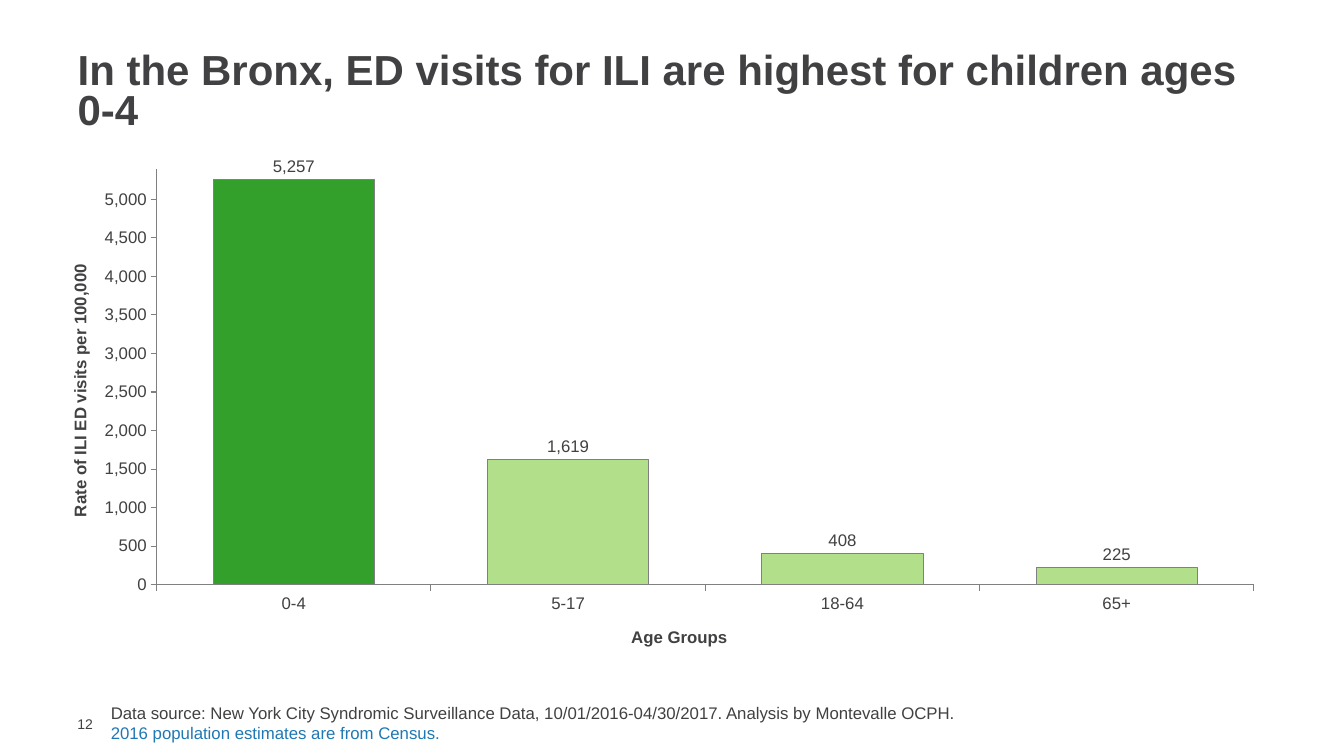
from lxml import etree
from pptx import Presentation
from pptx.chart.data import CategoryChartData
from pptx.dml.color import RGBColor
from pptx.enum.chart import XL_CHART_TYPE as ChartType, XL_LABEL_POSITION as LabelPosition
from pptx.enum.chart import XL_TICK_MARK as TickMark
from pptx.enum.text import MSO_ANCHOR as Anchor, PP_ALIGN as Align
from pptx.oxml.ns import qn
from pptx.util import Inches, Pt

COLORS = {
    "text": "414042",
    "note": "1F78B4",
    "axis": "808080",
    "bar": "B2DF8A",
    "highlight": "33A02C",
}
RATES = {"0-4": 5257, "5-17": 1619, "18-64": 408, "65+": 225}
PLOT_LAYOUT = {
    "layoutTarget": "inner",
    "xMode": "edge",
    "yMode": "edge",
    "x": 0.075,
    "y": 0.027,
    "w": 0.913,
    "h": 0.732,
}


def color(name):
    return RGBColor.from_string(COLORS[name])


def apply(target, values):
    for key, value in values.items():
        setattr(target, key, value)


def style_font(font, size, color_name="text", bold=False):
    apply(font, {"name": "Arial", "size": Pt(size), "bold": bold})
    font.color.rgb = color(color_name)


def style_line(line):
    line.color.rgb = color("axis")
    line.width = Pt(0.75)


def place(box):
    return dict(zip(("left", "top", "width", "height"), map(Inches, box)))


def add_title(slide, box, wording):
    title = slide.shapes.title
    apply(title, place(box))
    apply(title.text_frame, {
        "text": wording,
        "word_wrap": True,
        "vertical_anchor": Anchor.MIDDLE,
    })
    heading = title.text_frame.paragraphs[0]
    apply(heading, {"alignment": Align.LEFT, "line_spacing": 0.8})
    style_font(heading.runs[0].font, 30, bold=True)


def add_text(slide, box, lines, size, frame_format):
    frame = slide.shapes.add_textbox(**place(box)).text_frame
    apply(frame, {"word_wrap": True, **frame_format})
    for index, (wording, color_name) in enumerate(lines):
        paragraph = frame.add_paragraph() if index else frame.paragraphs[0]
        run = paragraph.add_run()
        run.text = wording
        style_font(run.font, size, color_name)


def format_axis(axis, caption):
    apply(axis, {
        "has_major_gridlines": False,
        "major_tick_mark": TickMark.OUTSIDE,
        "minor_tick_mark": TickMark.NONE,
    })
    style_line(axis.format.line)
    style_font(axis.tick_labels.font, 12)
    heading = axis.axis_title.text_frame
    heading.text = caption
    style_font(heading.paragraphs[0].runs[0].font, 12, bold=True)


def set_plot_layout(chart):
    plot_area = chart.element.chart.plotArea
    for old_layout in plot_area.findall(qn("c:layout")):
        plot_area.remove(old_layout)
    layout = etree.Element(qn("c:layout"))
    manual = etree.SubElement(layout, qn("c:manualLayout"))
    for key, value in PLOT_LAYOUT.items():
        etree.SubElement(manual, qn(f"c:{key}")).set("val", str(value))
    plot_area.insert(0, layout)


def add_rate_chart(slide, box):
    rates = CategoryChartData(number_format="#,##0")
    rates.categories = list(RATES)
    rates.add_series("Series 1", list(RATES.values()))
    chart = slide.shapes.add_chart(
        ChartType.COLUMN_CLUSTERED, *place(box).values(), rates
    ).chart
    apply(chart, {"has_legend": False, "has_title": False})
    style_font(chart.font, 12)
    set_plot_layout(chart)

    format_axis(chart.category_axis, "Age Groups")
    format_axis(chart.value_axis, "Rate of ILI ED visits per 100,000")
    apply(chart.value_axis, {"minimum_scale": 0, "maximum_scale": 5400, "major_unit": 500})
    apply(chart.value_axis.tick_labels, {
        "number_format": "#,##0",
        "number_format_is_linked": False,
    })

    plot = chart.plots[0]
    apply(plot, {"gap_width": 70, "vary_by_categories": False, "has_data_labels": True})
    apply(plot.data_labels, {
        "show_value": True,
        "number_format": "#,##0",
        "number_format_is_linked": False,
        "position": LabelPosition.OUTSIDE_END,
    })
    style_font(plot.data_labels.font, 12)

    bars = plot.series[0]
    for part, color_name in ((bars, "bar"), (bars.points[0], "highlight")):
        part.format.fill.solid()
        part.format.fill.fore_color.rgb = color(color_name)
        style_line(part.format.line)


def build_rate_slide(deck):
    slide = deck.slides.add_slide(deck.slide_layouts[5])
    add_text(slide, (0.67, 7.1, 0.43, 0.17), [("12", "text")], 10, {
        "vertical_anchor": Anchor.MIDDLE,
        "margin_left": Inches(0.1),
        "margin_top": 0,
        "margin_right": 0,
        "margin_bottom": 0,
    })
    add_text(slide, (1, 6.92, 9.92, 0.5), [
        ("Data source: New York City Syndromic Surveillance Data, "
         "10/01/2016-04/30/2017. Analysis by Montevalle OCPH.", "text"),
        ("2016 population estimates are from Census.", "note"),
    ], 12, {})
    add_title(slide, (0.67, 0.47, 12, 0.91),
              "In the Bronx, ED visits for ILI are highest for children ages 0-4")
    add_rate_chart(slide, (0.66, 1.52, 11.92, 5.64))


def main():
    deck = Presentation()
    apply(deck, {"slide_width": Inches(13.33), "slide_height": Inches(7.5)})
    build_rate_slide(deck)
    deck.save("out.pptx")


if __name__ == "__main__":
    main()
